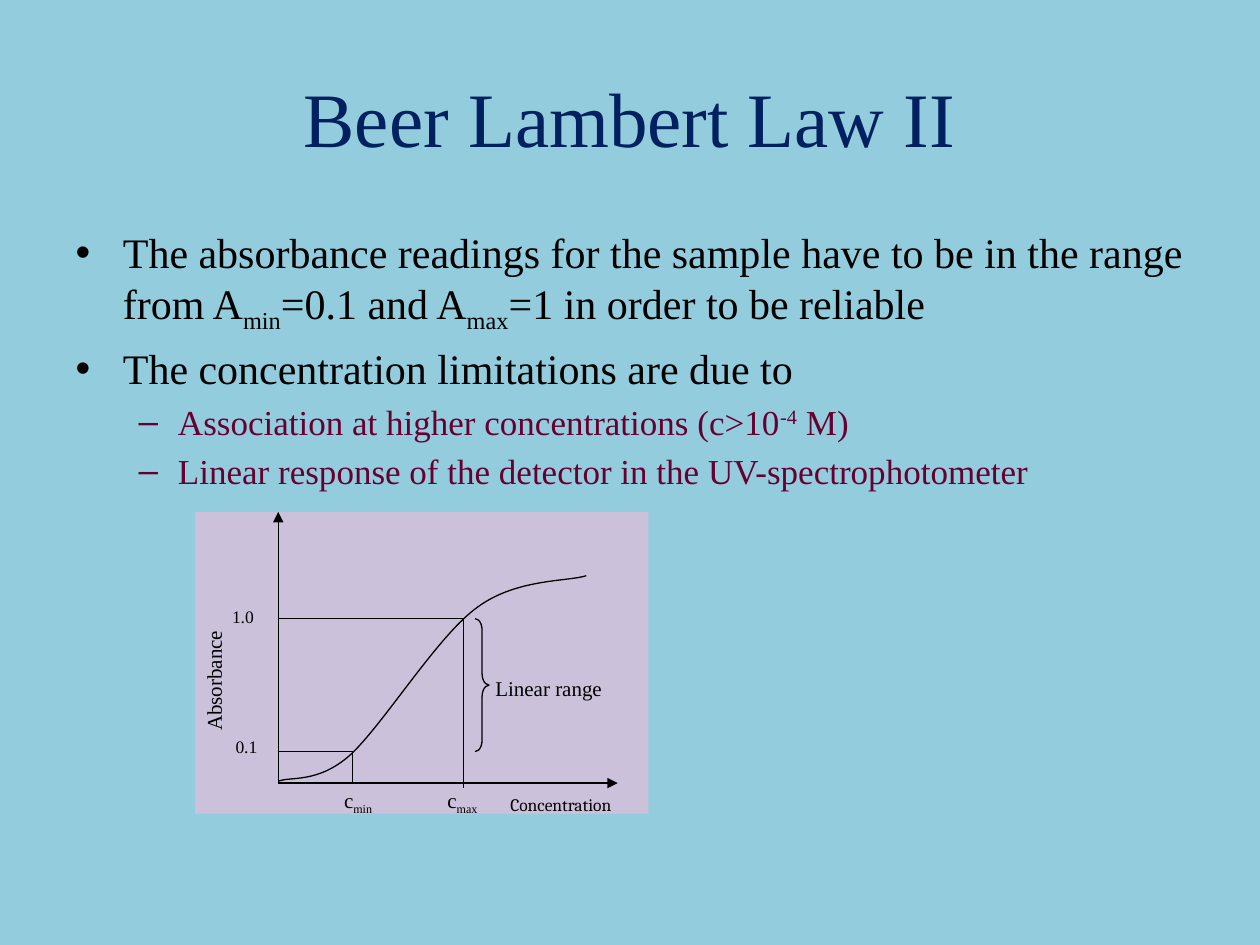
from dataclasses import dataclass

from lxml.etree import SubElement
from pptx import Presentation
from pptx.dml.color import RGBColor as RGB
from pptx.enum.shapes import MSO_CONNECTOR as CONN, MSO_SHAPE as SHAPE
from pptx.enum.text import MSO_ANCHOR as ANCHOR, MSO_AUTO_SIZE as AUTO, PP_ALIGN as ALIGN
from pptx.oxml.ns import qn
from pptx.util import Pt

SUB, SUP = -25000, 30000


@dataclass(frozen=True)
class Theme:
    background: RGB = RGB(0x93, 0xCD, 0xDD)
    panel: RGB = RGB(0xCC, 0xC1, 0xDA)
    title: RGB = RGB(0x00, 0x20, 0x60)
    ink: RGB = RGB(0, 0, 0)
    accent: RGB = RGB(0x66, 0x00, 0x33)
    font: str = "Times New Roman"
    axis_font: str = "Cambria"
    title_size: float = 44
    body_size: float = 24
    sub_size: float = 20
    label_size: float = 12
    tick_size: float = 10
    stroke: float = 0.75


class SlideBuilder:
    def __init__(self, slide, theme):
        self.slide = slide
        self.theme = theme
        self.shapes = slide.shapes
        fill = slide.background.fill
        fill.solid()
        fill.fore_color.rgb = theme.background

    def start_group(self):
        self.shapes = self.slide.shapes.add_group_shape().shapes

    def end_group(self):
        self.shapes = self.slide.shapes

    def set_text(self, p, runs, size, color, font=None):
        """Fill a paragraph from plain strings and (text, baseline) pairs."""
        p.font.name = font or self.theme.font
        p.font.size = Pt(size)
        p.font.color.rgb = color
        for run in runs:
            text, baseline = (run, 0) if isinstance(run, str) else run
            r = p.add_run()
            r.text = text
            if baseline:
                r._r.get_or_add_rPr().set("baseline", str(baseline))

    def place(self, sp, left, top, width, height):
        sp.left, sp.top, sp.width, sp.height = map(Pt, (left, top, width, height))

    def title(self, text, *box):
        sp = self.slide.shapes.title
        self.place(sp, *box)
        sp.text_frame.vertical_anchor = ANCHOR.MIDDLE
        p = sp.text_frame.paragraphs[0]
        p.alignment = ALIGN.CENTER
        self.set_text(p, [text], self.theme.title_size, self.theme.title)

    def bullets(self, items, *box):
        sp = self.slide.placeholders[1]
        self.place(sp, *box)
        tf = sp.text_frame
        t = self.theme
        styles = [(t.body_size, t.ink), (t.sub_size, t.accent)]
        for i, (level, runs) in enumerate(items):
            p = tf.add_paragraph() if i else tf.paragraphs[0]
            p.level = level
            self.set_text(p, runs, *styles[level])

    def outline(self, sp):
        sp.shadow.inherit = False
        sp.fill.background()
        sp.line.color.rgb = self.theme.ink
        sp.line.width = Pt(self.theme.stroke)

    def panel(self, *box):
        sp = self.shapes.add_shape(SHAPE.RECTANGLE, *map(Pt, box))
        sp.shadow.inherit = False
        sp.fill.solid()
        sp.fill.fore_color.rgb = self.theme.panel
        sp.line.fill.background()

    def line(self, x1, y1, x2, y2, arrow=False):
        cx = self.shapes.add_connector(CONN.STRAIGHT, *map(Pt, (x1, y1, x2, y2)))
        cx.line.color.rgb = self.theme.ink
        cx.line.width = Pt(self.theme.stroke)
        sp_pr = cx._element.spPr
        if arrow:
            SubElement(sp_pr.find(qn("a:ln")), qn("a:tailEnd"), type="triangle")
        SubElement(sp_pr, qn("a:effectLst"))

    def curve(self, start, segments):
        """Draw cubic Béziers; each segment is two control points and an end."""
        builder = self.shapes.build_freeform(*map(Pt, start))
        builder.add_line_segments([tuple(map(Pt, s[-1])) for s in segments], close=False)
        sp = builder.convert_to_shape()
        self.outline(sp)
        outline_path = next(sp._element.iter(qn("a:path")))
        left = start[0]
        top = min(y for _, y in [start] + [s[-1] for s in segments])
        for old, segment in zip(outline_path.findall(qn("a:lnTo")), segments):
            bezier = SubElement(outline_path, qn("a:cubicBezTo"))
            for x, y in segment:
                SubElement(bezier, qn("a:pt"), x=str(int(Pt(x - left))), y=str(int(Pt(y - top))))
            outline_path.replace(old, bezier)

    def brace(self, *box):
        sp = self.shapes.add_shape(SHAPE.RIGHT_BRACE, *map(Pt, box))
        sp.adjustments[0] = 0.82
        sp.adjustments[1] = 0.5
        self.outline(sp)

    def label(self, runs, *box, size=None, font=None, wrap=False, rotation=0):
        sp = self.shapes.add_textbox(*map(Pt, box))
        sp.rotation = rotation
        tf = sp.text_frame
        tf.word_wrap = wrap
        tf.auto_size = AUTO.NONE if wrap else AUTO.SHAPE_TO_FIT_TEXT
        self.set_text(tf.paragraphs[0], runs, size or self.theme.label_size,
                      self.theme.ink, font)


def draw_absorbance_graph(s):
    t = s.theme
    x0, x_min, x_max, x_end = 159, 201.5, 265, 353
    y0, y_min, y_max, y_end = 447.5, 429.5, 353.5, 292.5

    s.panel(111.5, 292.5, 259, 172.5)
    s.start_group()
    s.line(x0, y_min, x_min, y_min)
    s.line(x_min, y_min, x_min, y0)
    s.line(x0, y0, x0, y_end, arrow=True)
    s.line(x0, y0, x_end, y0, arrow=True)
    s.curve((x0, 446.5), [
        [(165.5, 443.5), (181, 448), (199.5, 432)],
        [(218, 415.5), (249, 365), (271.5, 348)],
        [(294, 330.5), (324, 332.5), (335, 329)],
    ])
    s.line(x_max, y_max, x0, y_max)
    s.line(x_max, y_max, x_max, 450)
    s.brace(271.5, y_max, 8, y_min - y_max)
    s.label(["Linear range"], 276, 382.5, 92, 26, wrap=True)
    s.label(["Concentration"], 284.5, 450, 79, 22, wrap=True,
            size=t.tick_size, font=t.axis_font)
    s.label(["Absorbance"], 85.5, 377.5, 73, 21.5, rotation=270)
    for text, left, top in [("0.1", 127.5, 417), ("1.0", 125.5, 343)]:
        s.label([text], left, top, 29.5, 22, size=t.tick_size)
    s.end_group()
    for name, left, width in [("min", 189.5, 32.5), ("max", 248.5, 34)]:
        s.label(["c", (name, SUB)], left, 446.5, width, 21.5)


def main():
    prs = Presentation()
    prs.slide_width, prs.slide_height = Pt(720), Pt(540)
    s = SlideBuilder(prs.slides.add_slide(prs.slide_layouts[1]), Theme())
    s.title("Beer Lambert Law II", 36, 21.6, 648, 90)
    s.bullets([
        (0, ["The absorbance readings for the sample have to be in the range from A",
             ("min", SUB), "=0.1 and A", ("max", SUB), "=1 in order to be reliable"]),
        (0, ["The concentration limitations are due to"]),
        (1, ["Association at higher concentrations (c>10", ("-4", SUP), " M)"]),
        (1, ["Linear response of the detector in the UV-spectrophotometer"]),
    ], 36, 126, 648, 356.4)
    draw_absorbance_graph(s)
    prs.save("out.pptx")


if __name__ == "__main__":
    main()
